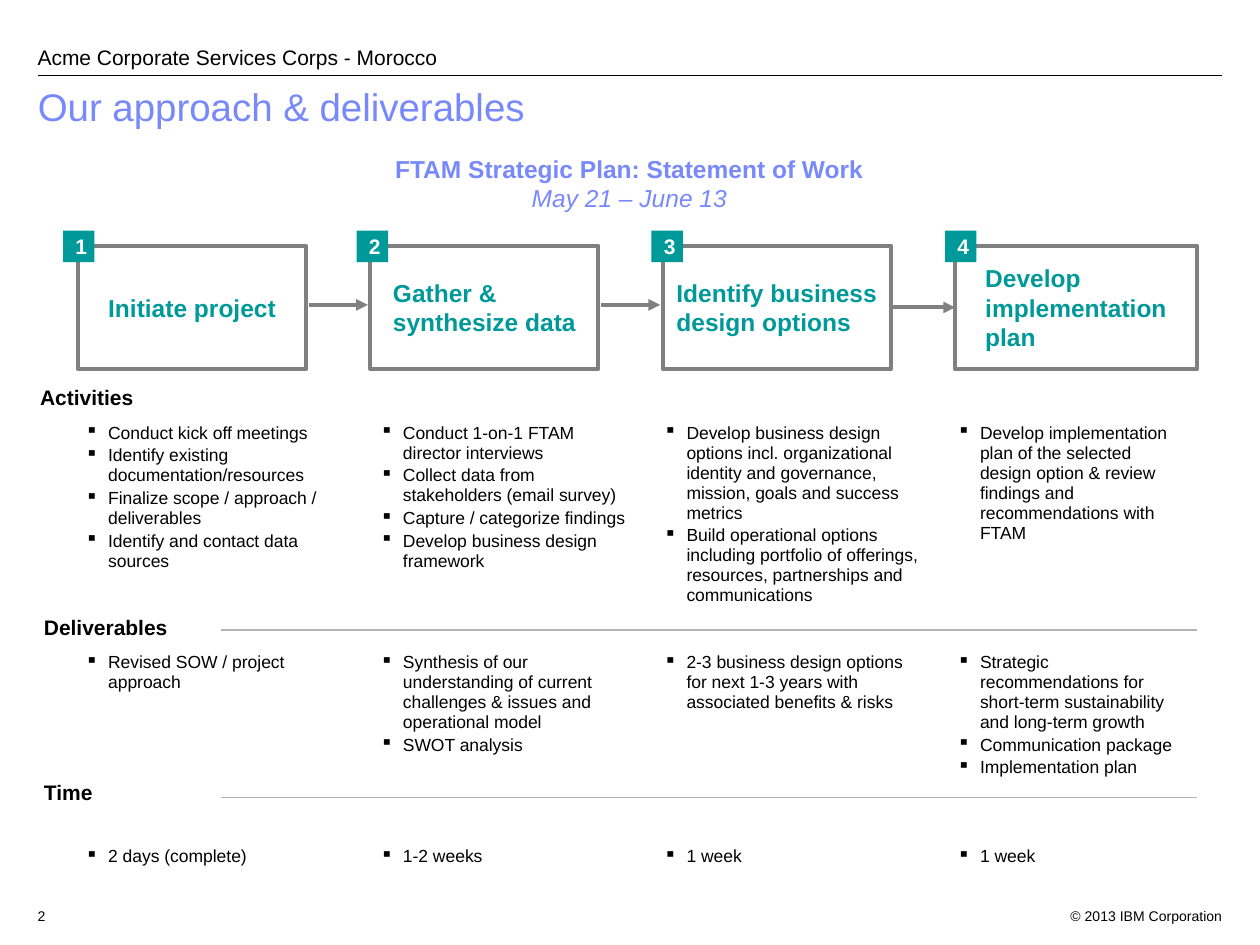
from dataclasses import dataclass

from lxml import etree
from pptx import Presentation
from pptx import util as u
from pptx.dml import color
from pptx.enum import shapes, text
from pptx.oxml import ns

PX = 9144


@dataclass(frozen=True)
class Theme:
    font: str = "Arial"
    ink: str = "000000"
    accent: str = "7889FB"
    teal: str = "009999"
    border: str = "808080"
    divider: str = "B3B3B3"
    paper: str = "FFFFFF"
    title_size: int = 22
    stage_size: int = 14
    label_size: int = 12
    body_size: int = 10
    footer_size: int = 8


THEME = Theme()
SLIDE_SIZE = (1000, 750)
ROWS = [
    ("Activities", (22, 300, 95, 30), 331),
    ("Deliverables", (25, 483, 119, 30), 513),
    ("Time", (25, 614, 59, 30), 667),
]
DIVIDERS = [500, 633]
ARROWS = [(245, 292, 242), (477, 524, 242), (707, 758, 244)]
STAGES = [
    {
        "name": "Initiate project",
        "box": (62, 195, 181, 98),
        "column": (58, 225),
        "heights": (186, 186, 186),
        "items": [
            ["Conduct kick off meetings", "Identify existing documentation/resources",
             "Finalize scope / approach / deliverables", "Identify and contact data sources"],
            ["Revised SOW / project approach"],
            ["2 days (complete)"],
        ],
    },
    {
        "name": "Gather & synthesize data",
        "box": (294, 195, 181, 98),
        "column": (292, 217),
        "heights": (130, 93, 26),
        "items": [
            ["Conduct 1-on-1 FTAM director interviews",
             "Collect data from stakeholders (email survey)",
             "Capture / categorize findings", "Develop business design framework"],
            ["Synthesis of our understanding of current challenges & issues and operational model",
             "SWOT analysis"],
            ["1-2 weeks"],
        ],
    },
    {
        "name": "Identify business design options",
        "box": (526, 195, 181, 98),
        "column": (517, 225),
        "heights": (186, 186, 186),
        "items": [
            ["Develop business design options incl. organizational identity and governance, "
             "mission, goals and success metrics",
             "Build operational options including portfolio of offerings, resources, "
             "partnerships and communications"],
            ["2-3 business design options for next 1-3 years with associated benefits & risks"],
            ["1 week"],
        ],
    },
    {
        "name": "Develop implementation plan",
        "box": (758, 195, 192, 98),
        "column": (750, 200),
        "heights": (106, 133, 48),
        "items": [
            ["Develop implementation plan of the selected design option & review findings "
             "and recommendations with FTAM"],
            ["Strategic recommendations for short-term sustainability and long-term growth",
             "Communication package", "Implementation plan"],
            ["1 week"],
        ],
    },
]


def emu(*lengths):
    return [u.Emu(length * PX) for length in lengths]


def rgb(value):
    return color.RGBColor.from_string(value)


def apply(target, **values):
    for name, value in values.items():
        setattr(target, name, value)


def style(paragraph, size, ink=THEME.ink, **values):
    for run in paragraph.runs:
        apply(run.font, name=THEME.font, size=u.Pt(size), **values)
        run.font.color.rgb = rgb(ink)


def add_text(slide, box, lines, size, ink=THEME.ink, align=text.PP_ALIGN.LEFT, frame=None, **font):
    shape = slide.shapes.add_textbox(*emu(*box))
    apply(shape.text_frame, **{"word_wrap": True, **(frame or {})})
    shape.text_frame.text = "\n".join(lines)
    for paragraph in shape.text_frame.paragraphs:
        paragraph.alignment = align
        style(paragraph, size, ink, **font)
    return shape


def add_line(slide, start, end, ink, width, arrow=False):
    line = slide.shapes.add_connector(shapes.MSO_CONNECTOR.STRAIGHT, *emu(*start, *end))
    line.line.color.rgb = rgb(ink)
    line.line.width = u.Pt(width)
    if arrow:
        outline = line._element.spPr.find(ns.qn("a:ln"))
        etree.SubElement(outline, ns.qn("a:tailEnd"), type="triangle")
    etree.SubElement(line._element.spPr, ns.qn("a:effectLst"))


def add_box(slide, box, words, fill, size, ink, align):
    shape = slide.shapes.add_shape(shapes.MSO_SHAPE.RECTANGLE, *emu(*box))
    shape.shadow.inherit = False
    shape.fill.solid()
    shape.fill.fore_color.rgb = rgb(fill)
    shape.line.fill.background()
    shape.text_frame.text = words
    apply(shape.text_frame, word_wrap=True, vertical_anchor=text.MSO_ANCHOR.MIDDLE)
    paragraph = shape.text_frame.paragraphs[0]
    paragraph.alignment = align
    style(paragraph, size, ink, bold=True)
    return shape


def add_bullets(slide, box, items):
    shape = add_text(slide, box, items, THEME.body_size)
    for index, paragraph in enumerate(shape.text_frame.paragraphs):
        properties = paragraph._p.get_or_add_pPr()
        properties.set("marL", str(18 * PX))
        properties.set("indent", str(-18 * PX))
        bullet_color = etree.SubElement(properties, ns.qn("a:buClr"))
        etree.SubElement(bullet_color, ns.qn("a:srgbClr"), val=THEME.ink)
        etree.SubElement(properties, ns.qn("a:buChar"), char="▪")
        apply(paragraph, line_spacing=0.95, space_before=u.Pt(1.5 if index else 0))


def add_header(slide, box):
    left, top, width, _ = box
    add_text(slide, (left, top, 863, 40), ["Acme Corporate Services Corps - Morocco"],
             THEME.label_size,
             frame={"vertical_anchor": text.MSO_ANCHOR.BOTTOM, "margin_top": 0, "margin_bottom": 0})
    add_line(slide, (left + 10, top + 45), (left + width, top + 45), THEME.ink, 0.75)
    title = slide.shapes.title
    placement = zip(("left", "top", "width", "height"), emu(left, top + 50, width, 77))
    apply(title, **dict(placement))
    title.text_frame.text = "Our approach & deliverables"
    apply(title.text_frame, word_wrap=True, auto_size=text.MSO_AUTO_SIZE.NONE,
          vertical_anchor=text.MSO_ANCHOR.TOP)
    paragraph = title.text_frame.paragraphs[0]
    apply(paragraph, alignment=text.PP_ALIGN.LEFT, line_spacing=0.9)
    style(paragraph, THEME.title_size, THEME.accent)


def add_subtitle(slide, box):
    shape = add_text(slide, box, ["FTAM Strategic Plan: Statement of Work", "May 21 – June 13"],
                     THEME.stage_size, THEME.accent, text.PP_ALIGN.CENTER,
                     {"vertical_anchor": text.MSO_ANCHOR.MIDDLE})
    heading, dates = shape.text_frame.paragraphs
    heading.runs[0].font.bold = True
    dates.runs[0].font.italic = True


def add_stage(slide, box, number, name, badge_left):
    shape = add_box(slide, box, name, THEME.paper, THEME.stage_size, THEME.teal,
                    text.PP_ALIGN.LEFT)
    shape.line.color.rgb = rgb(THEME.border)
    shape.line.width = u.Pt(2.25)
    apply(shape.text_frame, margin_top=u.Emu(10 * PX), margin_bottom=u.Emu(10 * PX))
    shape.text_frame._txBody.bodyPr.set("anchorCtr", "1")
    add_box(slide, (badge_left, box[1] - 12, 25, 25), str(number), THEME.teal,
            THEME.label_size, THEME.paper, text.PP_ALIGN.CENTER)


def add_row(slide, index, label, label_box, top):
    add_text(slide, label_box, [label], THEME.label_size, frame={"word_wrap": False}, bold=True)
    for stage in STAGES:
        left, width = stage["column"]
        height = min(stage["heights"][index], SLIDE_SIZE[1] - top)
        add_bullets(slide, (left, top, width, height), stage["items"][index])


def add_footer(slide, box):
    left, top, width, height = box
    add_text(slide, (left, top, 40, height), ["2"], THEME.footer_size)
    add_text(slide, (left + width - 150, top, 150, height), ["© 2013 IBM Corporation"],
             THEME.footer_size, align=text.PP_ALIGN.RIGHT)


def main():
    presentation = Presentation()
    presentation.slide_width, presentation.slide_height = emu(*SLIDE_SIZE)
    slide = presentation.slides.add_slide(presentation.slide_layouts[5])
    add_header(slide, (20, 15, 950, 127))
    add_subtitle(slide, (47, 117, 905, 57))
    for number, stage in enumerate(STAGES, 1):
        badge_left = round(50 + (number - 1) * 700 / 3)
        add_stage(slide, stage["box"], number, stage["name"], badge_left)
    for start, end, y in ARROWS:
        add_line(slide, (start, y), (end, y), THEME.border, 2.25, arrow=True)
    for index, row in enumerate(ROWS):
        add_row(slide, index, *row)
    for y in DIVIDERS:
        add_line(slide, (175, y), (950, y), THEME.divider, 0.75)
    add_footer(slide, (20, 715, 960, 20))
    presentation.save("out.pptx")


if __name__ == "__main__":
    main()
